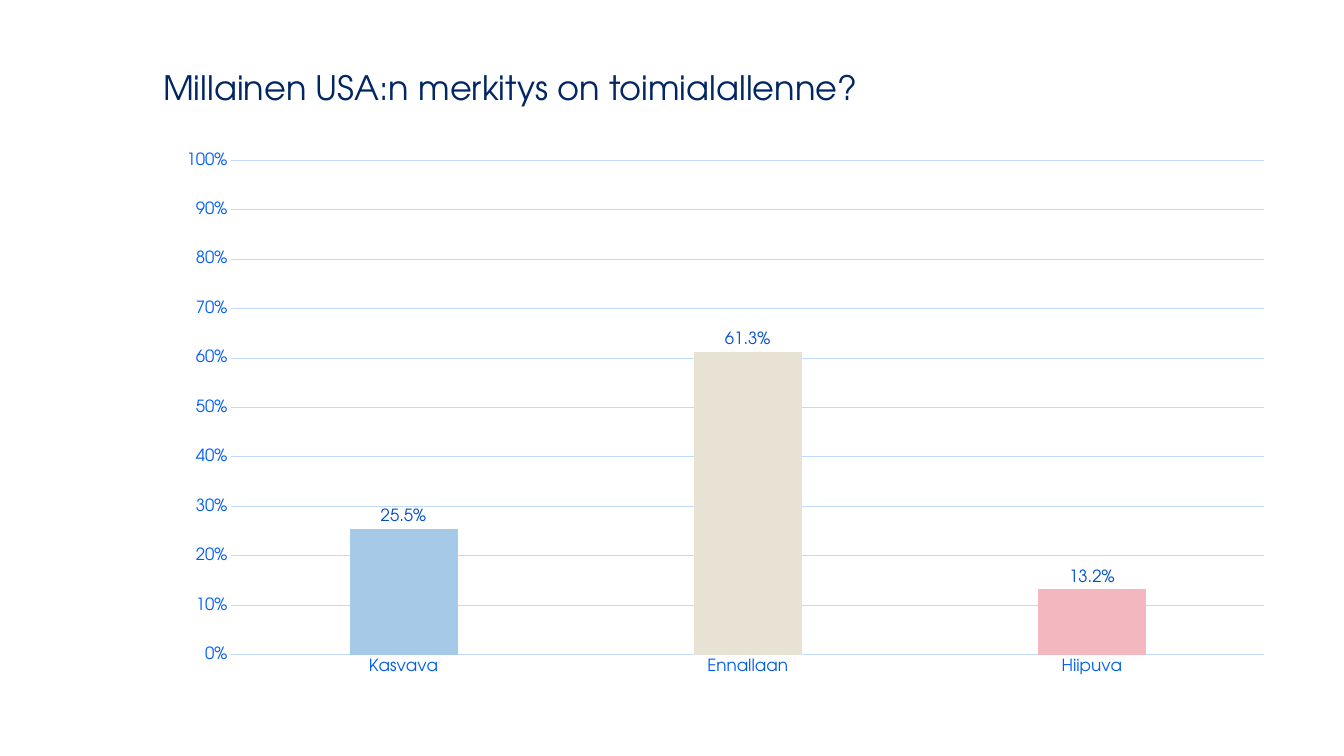
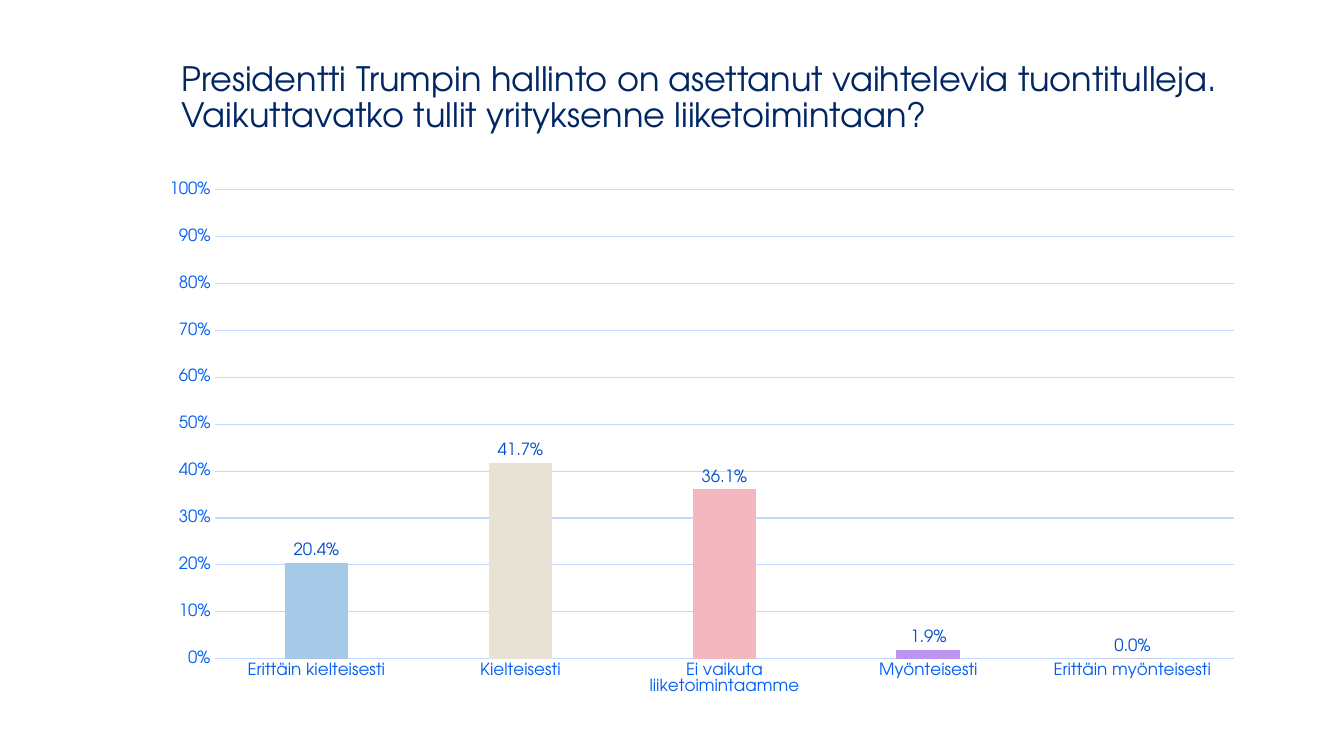
import dataclasses

import pptx
import pptx.chart.data
import pptx.dml.color
import pptx.enum.chart
import pptx.enum.text
import pptx.oxml
import pptx.oxml.ns
import pptx.util
from pptx.util import Cm


@dataclasses.dataclass(frozen=True)
class Theme:
    face: str = "TeX Gyre Adventor"
    navy: str = "002663"
    axis: str = "005DF3"
    label: str = "004DCA"
    grid: str = "C1D9FF"
    bars: tuple = ("A5C9E7", "E8E2D5", "F2B7BF", "BB95EF", "E66342")
    head: int = 24
    body: int = 12
    rule: float = 0.75


THEME = Theme()


def color(code):
    return pptx.dml.color.RGBColor.from_string(code)


def style(font, size, code):
    font.name = THEME.face
    font.size = pptx.util.Pt(size)
    font.color.rgb = color(code)


def rule(line):
    line.color.rgb = color(THEME.grid)
    line.width = pptx.util.Pt(THEME.rule)


def add_title(slide, left, top, text):
    box = slide.shapes.add_textbox(Cm(left), Cm(top), Cm(27.79), Cm(3.68))
    frame = box.text_frame
    frame.word_wrap = True
    frame.vertical_anchor = pptx.enum.text.MSO_ANCHOR.MIDDLE
    frame.text = text
    para = frame.paragraphs[0]
    para.line_spacing = 0.9
    style(para.runs[0].font, THEME.head, THEME.navy)


def place_plot(chart, area):
    """Fix the inner plot area; area is x, y, w, h in percent of the chart."""
    qn = pptx.oxml.ns.qn
    plot = chart.element.find(".//" + qn("c:plotArea"))
    for old in plot.findall(qn("c:layout")):
        plot.remove(old)
    sizes = "".join(f'<c:{key} val="{part / 100:.4f}"/>'
                    for key, part in zip("xywh", area))
    plot.insert(0, pptx.oxml.parse_xml(
        f'<c:layout {pptx.oxml.ns.nsdecls("c")}><c:manualLayout>'
        '<c:layoutTarget val="inner"/>'
        '<c:xMode val="edge"/><c:yMode val="edge"/>'
        f'{sizes}</c:manualLayout></c:layout>'))


def style_axes(chart):
    none = pptx.enum.chart.XL_TICK_MARK.NONE
    cats, vals = chart.category_axis, chart.value_axis
    for axis in (cats, vals):
        axis.major_tick_mark = axis.minor_tick_mark = none
        style(axis.tick_labels.font, THEME.body, THEME.axis)
    cats.has_major_gridlines = False
    rule(cats.format.line)
    vals.minimum_scale, vals.maximum_scale = 0, 1
    vals.major_unit = 0.1
    vals.has_major_gridlines = True
    rule(vals.major_gridlines.format.line)
    vals.format.line.fill.background()
    vals.tick_labels.number_format = "0%"
    vals.tick_labels.number_format_is_linked = False


def style_bars(plot):
    plot.gap_width, plot.overlap = 219, -27
    plot.vary_by_categories = False
    series = plot.series[0]
    for index, _ in enumerate(series.values):
        fill = series.points[index].format.fill
        fill.solid()
        fill.fore_color.rgb = color(THEME.bars[index])
    labels = series.data_labels
    labels.show_value = True
    labels.number_format = "0.0%"
    labels.number_format_is_linked = False
    labels.position = pptx.enum.chart.XL_LABEL_POSITION.OUTSIDE_END
    style(labels.font, THEME.body, THEME.label)


def add_bars(slide, rect, area, shares):
    data = pptx.chart.data.CategoryChartData()
    data.categories = list(shares)
    data.add_series("Series 1", list(shares.values()))
    kind = pptx.enum.chart.XL_CHART_TYPE.COLUMN_CLUSTERED
    chart = slide.shapes.add_chart(kind, *map(Cm, rect), data).chart
    chart.has_title = chart.has_legend = False
    style(chart.font, 10, THEME.navy)
    style_axes(chart)
    style_bars(chart.plots[0])
    place_plot(chart, area)


def main():
    deck = pptx.Presentation()
    deck.slide_width, deck.slide_height = Cm(33.87), Cm(19.05)
    blank = deck.slide_layouts[6]

    # Importance of the market
    slide = deck.slides.add_slide(blank)
    add_title(slide, 3.86, 0.41, "Millainen USA:n merkitys on toimialallenne?")
    add_bars(slide, (4.29, 3.43, 28.07, 13.89), (5.5, 4.4, 92.7, 89.7),
             {"Kasvava": 0.255, "Ennallaan": 0.613, "Hiipuva": 0.132})

    # Effect of tariffs
    slide = deck.slides.add_slide(blank)
    add_title(slide, 4.32, 0.64,
              "Presidentti Trumpin hallinto on asettanut vaihtelevia "
              "tuontitulleja. Vaikuttavatko tullit yrityksenne "
              "liiketoimintaan?")
    add_bars(slide, (3.73, 4.29, 27.94, 13.46), (6, 3.6, 92, 87.9),
             {"Erittäin kielteisesti": 0.204, "Kielteisesti": 0.417,
              "Ei vaikuta liiketoimintaamme": 0.361,
              "Myönteisesti": 0.019, "Erittäin myönteisesti": 0})

    deck.save("out.pptx")


if __name__ == "__main__":
    main()
